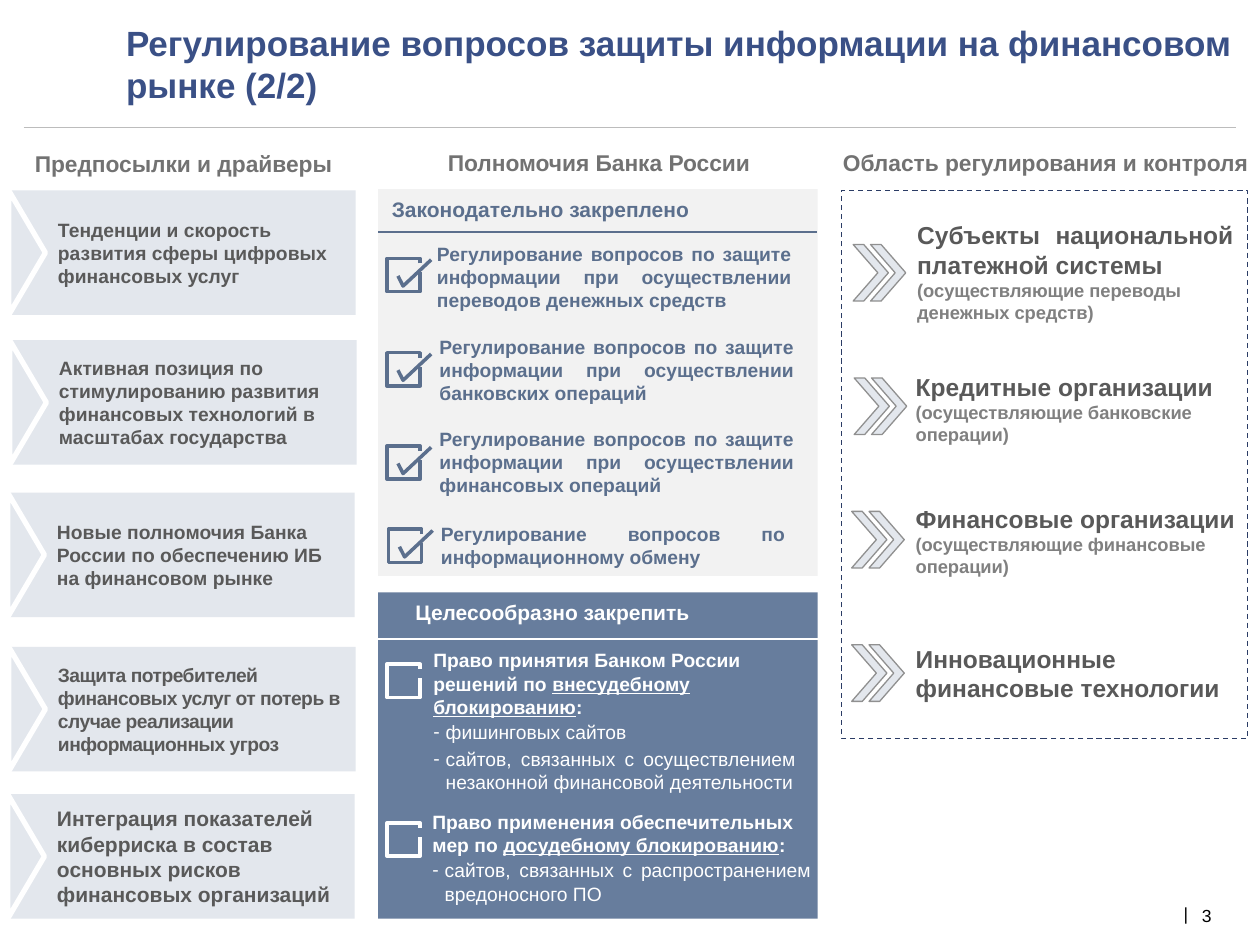
from dataclasses import dataclass

from lxml.etree import SubElement
from pptx import Presentation
from pptx.dml.color import RGBColor
from pptx.enum.dml import MSO_LINE
from pptx.enum.shapes import MSO_CONNECTOR, MSO_SHAPE
from pptx.enum.text import MSO_ANCHOR, MSO_AUTO_SIZE, PP_ALIGN
from pptx.oxml.ns import qn
from pptx.util import Cm, Pt


@dataclass(frozen=True)
class Theme:
    """Colours, type sizes and font of the slide."""
    font: str = "Arial"
    title: str = "3A5086"
    heading: str = "727272"
    body: str = "595959"
    muted: str = "808080"
    steel: str = "5B6F8D"
    panel: str = "677D9D"
    pale: str = "E3E7ED"
    light: str = "F2F2F2"
    white: str = "FFFFFF"
    black: str = "000000"
    rule: str = "BCBCBC"
    edge: str = "909090"
    frame: str = "2B3C65"
    title_size: float = 20
    area_size: float = 14
    heading_size: float = 13
    panel_size: float = 12
    text_size: float = 11
    note_size: float = 10.5
    page_size: float = 10


T = Theme()
LEFT, CENTER, RIGHT, JUSTIFY = PP_ALIGN.LEFT, PP_ALIGN.CENTER, PP_ALIGN.RIGHT, PP_ALIGN.JUSTIFY

DRIVERS = [
    (0.18, 3.84, "Тенденции и скорость развития сферы цифровых финансовых услуг", T.text_size, 0),
    (0.2, 6.86, "Активная позиция по стимулированию развития финансовых технологий в масштабах государства", T.text_size, 0),
    (0.16, 9.93, "Новые полномочия Банка России по обеспечению ИБ на финансовом рынке", T.text_size, 0),
    (0.18, 13.04, "Защита потребителей финансовых услуг от потерь в случае реализации информационных угроз", T.text_size, -30),
    (0.16, 16.01, "Интеграция показателей киберриска в состав основных рисков финансовых организаций", T.panel_size, 0),
]
POWERS = [
    (7.8, 5.21, 8.56, 4.75, 7.65, "по защите информации при осуществлении переводов денежных средств"),
    (7.8, 7.11, 8.61, 6.63, 7.65, "по защите информации при осуществлении банковских операций"),
    (7.8, 8.99, 8.61, 8.48, 7.65, "по защите информации при осуществлении финансовых операций"),
    (7.83, 10.67, 8.64, 10.41, 7.44, "по информационному обмену"),
]
AREAS = [
    (17.2, 18.24, 4.32, 6.88, JUSTIFY, "Субъекты национальной платежной системы", "(осуществляющие переводы денежных средств)"),
    (17.22, 18.21, 7.37, 6.65, JUSTIFY, "Кредитные организации", "(осуществляющие банковские операции)"),
    (17.17, 18.21, 10.03, 7.01, LEFT, "Финансовые организации", "(осуществляющие финансовые операции)"),
    (17.17, 18.21, 12.85, 6.76, JUSTIFY, "Инновационные финансовые технологии", ""),
]
HEADINGS = [
    (0.2, 2.9, 6.99, "Предпосылки и драйверы"),
    (7.65, 2.87, 8.84, "Полномочия Банка России"),
    (16.61, 2.87, 8.92, "Область регулирования и контроля"),
]
PROPOSALS = [
    (13.39, (8.48, 12.95, 7.82, 3.2),
     ["Право принятия Банком России решений по ", "внесудебному блокированию", ":"],
     [("фишинговых сайтов", 1.2),
      ("сайтов, связанных с осуществлением незаконной финансовой деятельности", 2.4)]),
    (16.59, (8.46, 16.21, 8.15, 2.18),
     ["Право применения обеспечительных мер по ", "досудебному блокированию", ":"],
     [("сайтов, связанных с распространением вредоносного ПО", 1.2)]),
]


def rgb(value):
    """Turn a hex value into a colour."""
    return RGBColor.from_string(value)


def add_run(p, text, size, color, **fmt):
    """Add a formatted run to a paragraph."""
    r = p.add_run()
    r.text = text
    values = {"name": T.font, "size": Pt(size), "bold": True, **fmt}
    for name, value in values.items():
        setattr(r.font, name, value)
    r.font.color.rgb = rgb(color)
    return r


def set_frame(tf, **fmt):
    """Set wrapping, anchor and other frame values."""
    values = {"word_wrap": True, "auto_size": MSO_AUTO_SIZE.NONE, "vertical_anchor": MSO_ANCHOR.TOP, **fmt}
    for name, value in values.items():
        setattr(tf, name, value)
    return tf


def no_margins():
    """Give frame values for zero margins."""
    return {f"margin_{side}": 0 for side in ("left", "top", "right", "bottom")}


def place(s, x, y, w, h):
    """Move and size a shape in centimetres."""
    for name, value in zip(("left", "top", "width", "height"), (x, y, w, h)):
        setattr(s, name, Cm(value))


def add_text(shapes, box, text, size, color, align=LEFT, bold=True, **fmt):
    """Add a text box with one paragraph and return its frame."""
    tf = set_frame(shapes.add_textbox(*map(Cm, box)).text_frame, **fmt)
    p = tf.paragraphs[0]
    p.alignment = align
    add_run(p, text, size, color, bold=bold)
    return tf


def style(s, fill=None, line=None, width=1):
    """Set fill and line of a shape and drop its shadow."""
    s.shadow.inherit = False
    if fill:
        s.fill.solid()
        s.fill.fore_color.rgb = rgb(fill)
    else:
        s.fill.background()
    if line:
        s.line.color.rgb = rgb(line)
        s.line.width = Pt(width)
    else:
        s.line.fill.background()
    return s


def add_shape(shapes, kind, box, rotation=0, adj=None, **look):
    """Add a styled preset shape."""
    s = style(shapes.add_shape(kind, *map(Cm, box)), **look)
    s.rotation = rotation
    if adj is not None:
        s.adjustments[0] = adj
    return s


def add_rule(shapes, x1, x2, y, color, width):
    """Add a horizontal line."""
    s = shapes.add_connector(MSO_CONNECTOR.STRAIGHT, Cm(x1), Cm(y), Cm(x2), Cm(y))
    s.line.color.rgb = rgb(color)
    s.line.width = Pt(width)
    SubElement(s._element.spPr, qn("a:effectLst"))


def add_stroke(shapes, x, y, points, color):
    """Draw an open outline from points relative to x, y."""
    start, *rest = [(Cm(x + dx), Cm(y + dy)) for dx, dy in points]
    fb = shapes.build_freeform(*start)
    fb.add_line_segments(rest, close=False)
    return style(fb.convert_to_shape(), line=color, width=2)


def add_checkbox(shapes, x, y, color, ticked=False):
    """Draw a checkbox with a gap at the right, ticked if asked."""
    a = 0.67
    add_stroke(shapes, x, y, [(a, 0.1), (a, 0), (0, 0), (0, a), (a, a), (a, 0.28)], color)
    if ticked:
        tick = add_stroke(shapes, x, y, [(0.22, 0.33), (0.31, 0.54), (0.91, 0.05)], color)
        tick.rotation = 356.1


def add_driver(shapes, x, y, text, size, spacing):
    """Add a driver block with a notch at its left."""
    w, h, notch = 6.99, 2.51, 0.74
    s = add_shape(shapes, MSO_SHAPE.RECTANGLE, (x, y, w, h), fill=T.pale)
    p = set_frame(s.text_frame, vertical_anchor=MSO_ANCHOR.MIDDLE).paragraphs[0]
    p.alignment = LEFT
    p._p.get_or_add_pPr().set("marL", str(Cm(0.74)))
    r = add_run(p, text, size, T.body)
    if spacing:
        r.font._element.set("spc", str(spacing))
    add_shape(shapes, MSO_SHAPE.ISOSCELES_TRIANGLE, (x - 0.89, y + (h - notch) / 2, h, notch),
              rotation=90, fill=T.pale, line=T.white, width=3)


def add_area(shapes, i, icon_x, x, y, w, align, name, note):
    """Add a regulated area with its double chevron."""
    for dx in (0.35, 0):
        add_shape(shapes, MSO_SHAPE.CHEVRON, (icon_x + dx, 4.93 + 2.69 * i, 0.71, 1.14),
                  adj=0.7, fill=T.pale, line=T.edge, width=0.75)
    tf = add_text(shapes, (x, y, w, 1.75), name, T.area_size, T.body, align)
    if note:
        add_run(tf.add_paragraph(), note, T.note_size, T.muted)


def set_bullet(p, char=None):
    """Give a paragraph a hanging bullet, or none."""
    pPr = p._p.get_or_add_pPr()
    indent = Cm(0.25) if char else 0
    pPr.set("marL", str(indent))
    pPr.set("indent", str(-indent))
    bullet = SubElement(pPr, qn("a:buChar" if char else "a:buNone"))
    if char:
        bullet.set("char", char)


def fill_proposal(shapes, ph, box, lead, items):
    """Place a body placeholder in front and write its lead and list."""
    shapes._spTree.append(ph._element)
    place(ph, *box)
    tf = set_frame(ph.text_frame)
    p = tf.paragraphs[0]
    set_bullet(p)
    p.space_before = 0
    for i, text in enumerate(lead):
        add_run(p, text, T.text_size, T.white, underline=i == 1)
    for text, gap in items:
        p = tf.add_paragraph()
        set_bullet(p, "-")
        p.alignment = JUSTIFY
        p.space_before = Pt(gap)
        add_run(p, text, T.text_size, T.white, bold=False)


def main():
    """Build and save the slide."""
    prs = Presentation()
    prs.slide_width, prs.slide_height = Cm(25.4), Cm(19.05)
    slide = prs.slides.add_slide(prs.slide_layouts[3])
    shapes = slide.shapes
    title, *bodies = slide.placeholders

    place(title, 2.54, 0.43, 22.38, 1.7)
    p = set_frame(title.text_frame, **no_margins()).paragraphs[0]
    p.alignment = LEFT
    add_run(p, "Регулирование вопросов защиты информации на финансовом рынке (2/2)", T.title_size, T.title)
    add_rule(shapes, 0.48, 24.92, 2.57, T.rule, 0.75)
    for x, y, w, text in HEADINGS:
        add_text(shapes, (x, y, w, 0.81), text, T.heading_size, T.heading, CENTER)

    for driver in DRIVERS:
        add_driver(shapes, *driver)

    for y, h, color in ((3.81, 7.8, T.light), (11.94, 6.58, T.panel)):
        add_shape(shapes, MSO_SHAPE.PENTAGON, (7.62, y, 8.86, h), rotation=180, adj=0, fill=color)
    add_text(shapes, (7.65, 3.84, 8.23, 0.76), "Законодательно закреплено", T.panel_size, T.steel)
    add_text(shapes, (7.62, 11.96, 7.04, 0.79), "Целесообразно закрепить", T.panel_size, T.white, CENTER)
    add_rule(shapes, 7.62, 16.46, 4.67, T.steel, 1)
    add_rule(shapes, 7.49, 16.48, 12.88, T.white, 1)
    for box_x, box_y, x, y, w, text in POWERS:
        add_checkbox(shapes, box_x, box_y, T.steel, ticked=True)
        add_text(shapes, (x, y, w, 1.68), f"Регулирование вопросов {text}", T.text_size, T.steel, JUSTIFY)
    for ph, (box_y, *content) in zip(bodies, PROPOSALS):
        add_checkbox(shapes, 7.8, box_y, T.white)
        fill_proposal(shapes, ph, *content)

    for i, area in enumerate(AREAS):
        add_area(shapes, i, *area)
    frame = add_shape(shapes, MSO_SHAPE.RECTANGLE, (16.97, 3.84, 8.18, 11.05), line=T.frame, width=0.75)
    frame.line.dash_style = MSO_LINE.DASH

    page = {"word_wrap": False, "vertical_anchor": MSO_ANCHOR.MIDDLE, **no_margins()}
    add_text(shapes, (24.23, 18.24, 0.58, 0.43), "3", T.page_size, T.black, bold=False, **page)
    add_text(shapes, (23.85, 18.16, 0.1, 0.51), "|", T.page_size, T.black, RIGHT, bold=False, **page)
    prs.save("out.pptx")


if __name__ == "__main__":
    main()
